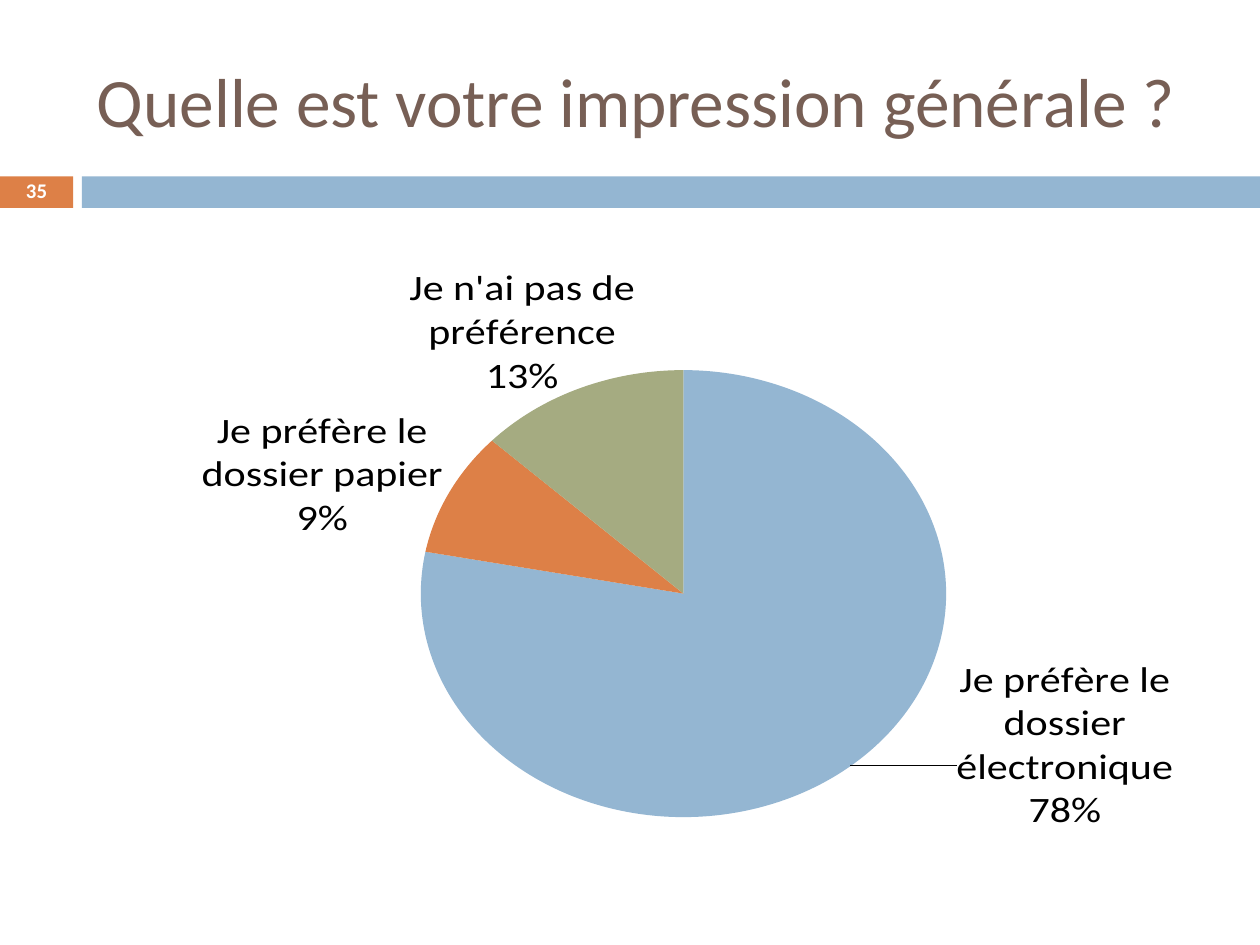
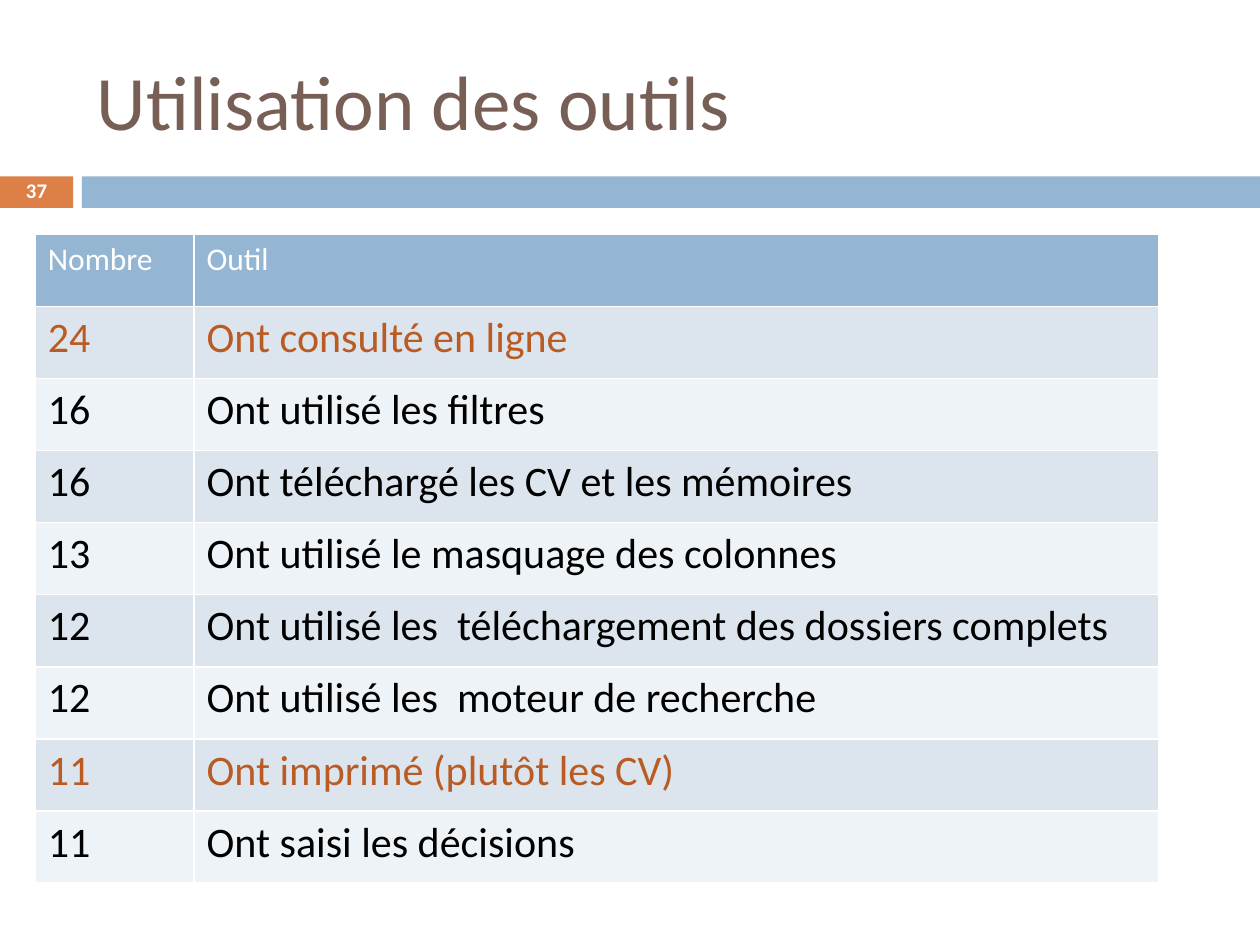
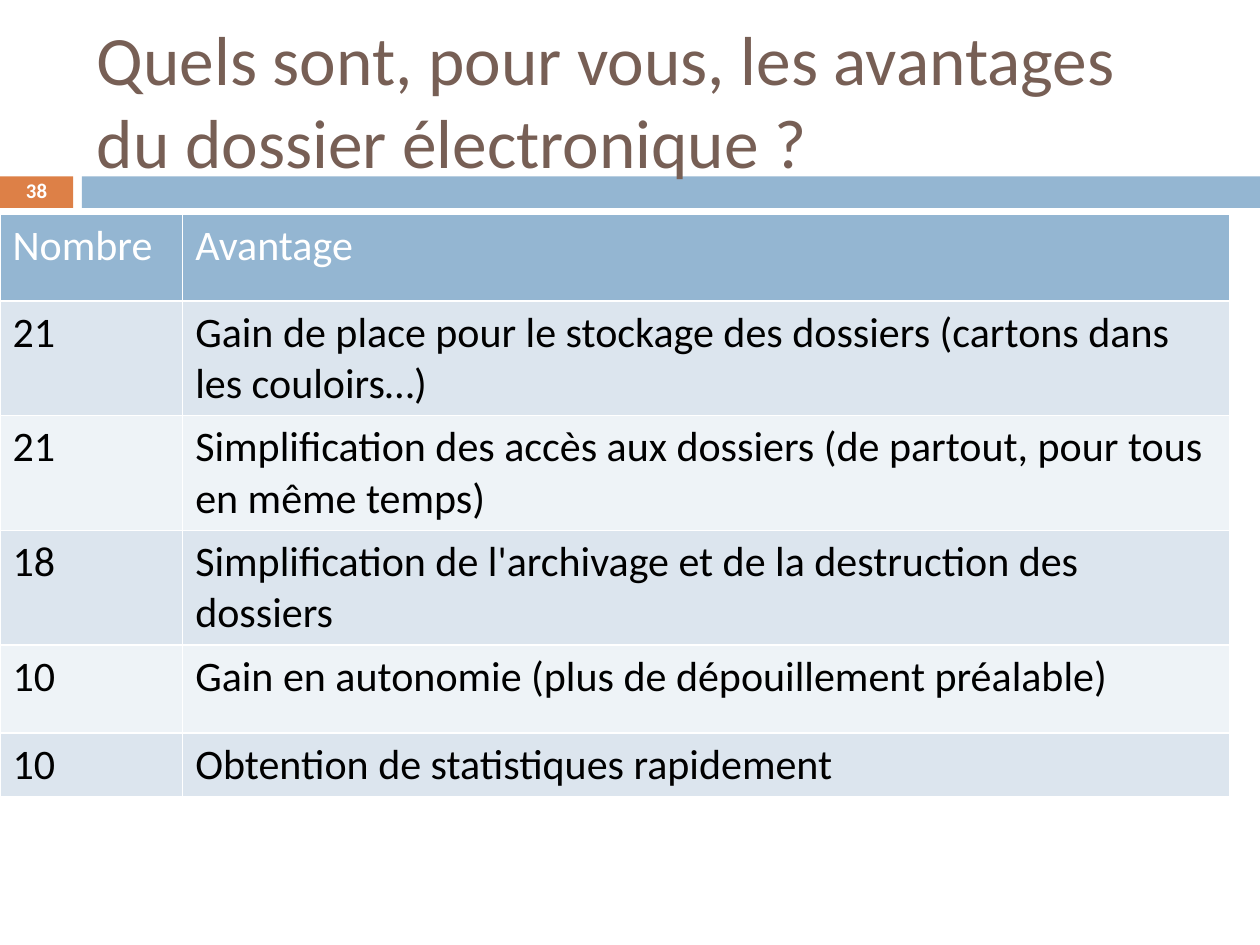
import pptx
import pptx.chart.data
import pptx.dml.color
import pptx.enum.chart
import pptx.enum.shapes
import pptx.enum.text
import pptx.oxml
import pptx.oxml.ns
import pptx.util
from pptx.util import Inches

# Content
FONT = "Calibri"
BLUE, ORANGE, GREEN = "94B6D2", "DD8047", "A5AB81"
BROWN, RUST, BLACK, WHITE = "775F55", "B95B22", "000000", "FFFFFF"
BAND_FILLS = ["DCE5EE", "EEF3F7"]

OPINIONS = [
    ("Je préfère le dossier électronique", 78, BLUE),
    ("Je préfère le dossier papier", 9, ORANGE),
    ("Je n'ai pas de préférence", 13, GREEN),
]

TOOLS = [
    ("Nombre", "Outil"),
    ("24", "Ont consulté en ligne"),
    ("16", "Ont utilisé les filtres"),
    ("16", "Ont téléchargé les CV et les mémoires"),
    ("13", "Ont utilisé le masquage des colonnes"),
    ("12", "Ont utilisé les  téléchargement des dossiers complets"),
    ("12", "Ont utilisé les  moteur de recherche"),
    ("11", "Ont imprimé (plutôt les CV)"),
    ("11", "Ont saisi les décisions"),
]
HIGHLIGHTED_TOOLS = [1, 7]

ADVANTAGES = [
    ("Nombre", "Avantage"),
    ("21", "Gain de place pour le stockage des dossiers (cartons dans les couloirs…)"),
    ("21", "Simplification des accès aux dossiers (de partout, pour tous en même temps)"),
    ("18", "Simplification de l'archivage et de la destruction des dossiers"),
    ("10", "Gain en autonomie (plus de dépouillement préalable)"),
    ("10", "Obtention de statistiques rapidement"),
]


# Helpers
def color(hex_code):
    return pptx.dml.color.RGBColor.from_string(hex_code)


def chart_xml(body):
    namespace = pptx.oxml.ns.nsdecls("c")
    return pptx.oxml.parse_xml(body.replace(">", f" {namespace}>", 1))


def write(frame, text, size, hex_code, bold=False, align=None, spacing=None):
    para = frame.paragraphs[0]
    para.alignment = align
    para.line_spacing = spacing
    span = para.add_run()
    span.text = text
    span.font.name = FONT
    span.font.size = pptx.util.Pt(size)
    span.font.bold = bold
    span.font.color.rgb = color(hex_code)


def add_text(page, area, text, **style):
    box = page.shapes.add_textbox(*map(Inches, area))
    box.text_frame.word_wrap = True
    box.text_frame.vertical_anchor = pptx.enum.text.MSO_ANCHOR.MIDDLE
    write(box.text_frame, text, **style)


def add_band(page, left, width, fill):
    band = page.shapes.add_shape(
        pptx.enum.shapes.MSO_SHAPE.RECTANGLE,
        Inches(left), Inches(1.4), Inches(width), Inches(0.25))
    band.shadow.inherit = False
    band.fill.solid()
    band.fill.fore_color.rgb = color(fill)
    band.line.fill.background()


def add_page(deck, number, title, title_size):
    page = deck.slides.add_slide(deck.slide_layouts[6])
    add_band(page, 0, 0.58, ORANGE)
    add_band(page, 0.65, 9.35, BLUE)
    add_text(page, (0, 1.39, 0.58, 0.27), number, size=11.9, hex_code=WHITE,
             bold=True, align=pptx.enum.text.PP_ALIGN.CENTER, spacing=0.8)
    add_text(page, (0.67, 0.25, 8.92, 1.08), title, size=title_size, hex_code=BROWN)
    return page


def set_borders(cell):
    properties = cell._tc.get_or_add_tcPr()
    for index, side in enumerate("LRTB"):
        properties.insert(index, pptx.oxml.parse_xml(
            f'<a:ln{side} {pptx.oxml.ns.nsdecls("a")} w="{pptx.util.Pt(1)}">'
            f'<a:solidFill><a:srgbClr val="{WHITE}"/></a:solidFill></a:ln{side}>'))


def add_grid(page, left, top, widths, heights, rows, header_size, highlighted=()):
    table = page.shapes.add_table(
        len(rows), len(widths), Inches(left), Inches(top),
        Inches(sum(widths)), Inches(sum(heights))).table
    for column, width in zip(table.columns, widths):
        column.width = Inches(width)
    for index, (texts, height) in enumerate(zip(rows, heights)):
        table.rows[index].height = Inches(height)
        header = index == 0
        fill = BLUE if header else BAND_FILLS[(index - 1) % 2]
        ink = WHITE if header else RUST if index in highlighted else BLACK
        for cell, text in zip(table.rows[index].cells, texts):
            cell.fill.solid()
            cell.fill.fore_color.rgb = color(fill)
            set_borders(cell)
            write(cell.text_frame, text, header_size if header else 24, ink)


def add_opinion_pie(page):
    data = pptx.chart.data.CategoryChartData()
    data.categories = [label for label, _, _ in OPINIONS]
    data.add_series("Series 1", [value for _, value, _ in OPINIONS])
    chart = page.shapes.add_chart(
        pptx.enum.chart.XL_CHART_TYPE.PIE,
        Inches(0), Inches(2), Inches(10), Inches(5.5), data).chart
    chart.has_title = False
    chart.has_legend = False
    chart.font.name = FONT
    chart.font.size = pptx.util.Pt(24)
    chart.font.color.rgb = color(BLACK)
    plot = chart.plots[0]
    plot.vary_by_categories = True
    series = plot.series[0]
    for index, (_, _, fill) in enumerate(OPINIONS):
        slice_fill = series.points[index].format.fill
        slice_fill.solid()
        slice_fill.fore_color.rgb = color(fill)

    # Category and share beside each slice
    labels = series.data_labels
    labels.show_value = False
    labels.show_category_name = True
    labels.show_percentage = True
    labels.number_format = "0%"
    labels.number_format_is_linked = False
    labels.position = pptx.enum.chart.XL_LABEL_POSITION.BEST_FIT
    element = labels._element
    separator = "<c:separator>\n</c:separator>"
    element.find(pptx.oxml.ns.qn("c:showBubbleSize")).addnext(chart_xml(separator))

    # The largest slice has its label moved out, with a leader line
    element.insert(0, chart_xml(
        '<c:dLbl><c:idx val="0"/><c:layout><c:manualLayout>'
        '<c:x val="0.08"/><c:y val="-0.19"/></c:manualLayout></c:layout>'
        '<c:numFmt formatCode="0%" sourceLinked="0"/><c:dLblPos val="outEnd"/>'
        '<c:showLegendKey val="0"/><c:showVal val="0"/><c:showCatName val="1"/>'
        '<c:showSerName val="0"/><c:showPercent val="1"/><c:showBubbleSize val="0"/>'
        f'{separator}</c:dLbl>'))

    # Fixed place of the pie inside the chart
    plot_area = chart._chartSpace.chart.plotArea
    for layout in plot_area.findall(pptx.oxml.ns.qn("c:layout")):
        plot_area.remove(layout)
    plot_area.insert(0, chart_xml(
        '<c:layout><c:manualLayout><c:layoutTarget val="inner"/>'
        '<c:xMode val="edge"/><c:yMode val="edge"/><c:x val="0.334"/><c:y val="0.174"/>'
        '<c:w val="0.417"/><c:h val="0.759"/></c:manualLayout></c:layout>'))


# Slides
def main():
    deck = pptx.Presentation()
    deck.slide_width, deck.slide_height = Inches(10), Inches(7.5)

    page = add_page(deck, "35", "Quelle est votre impression générale ?", 39.6)
    add_opinion_pie(page)

    page = add_page(deck, "37", "Utilisation des outils", 44)
    add_grid(page, 0.28, 1.86, [1.26, 7.66], [5.15 / len(TOOLS)] * len(TOOLS), TOOLS,
             header_size=18, highlighted=HIGHLIGHTED_TOOLS)

    page = add_page(
        deck, "38", "Quels sont, pour vous, les avantages du dossier électronique ?", 39.6)
    add_grid(page, 0, 1.7, [1.45, 8.31], [0.69, 0.91, 0.91, 0.91, 0.7, 0.5],
             ADVANTAGES, header_size=24)

    deck.save("out.pptx")


if __name__ == "__main__":
    main()
